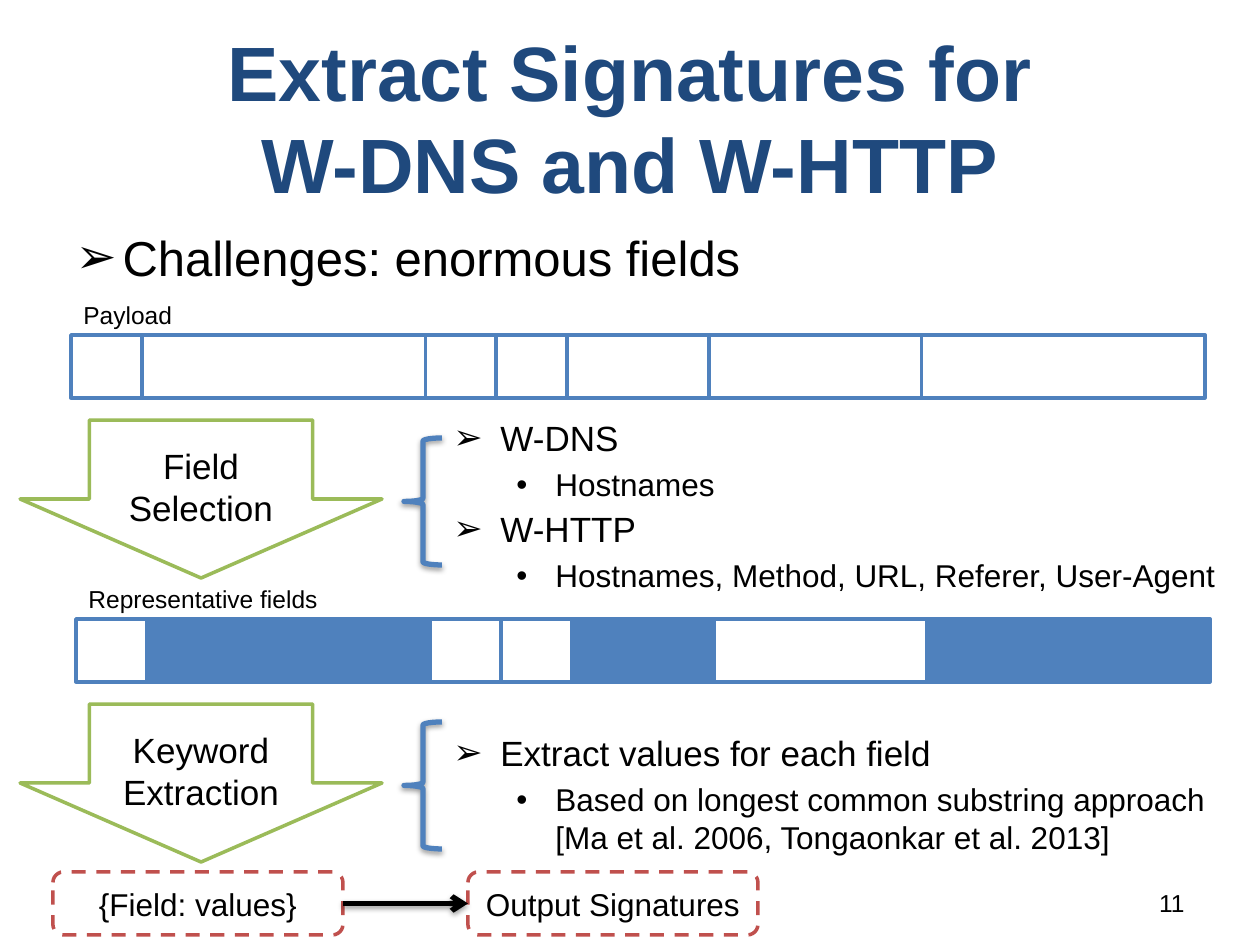
from itertools import accumulate
from lxml.etree import SubElement
from pptx import Presentation
from pptx.dml.color import RGBColor
from pptx.enum.dml import MSO_LINE_DASH_STYLE as DASH
from pptx.enum.shapes import MSO_CONNECTOR, MSO_SHAPE
from pptx.enum.text import MSO_ANCHOR, MSO_AUTO_SIZE as FIT, PP_ALIGN
from pptx.oxml import parse_xml
from pptx.oxml.ns import nsdecls, qn
from pptx.util import Pt

# Content
TITLE = "Extract Signatures for\vW-DNS and W-HTTP"
CHALLENGE = "Challenges: enormous fields"
FIELD_UNITS = [1, 4, 1, 1, 2, 3, 4]
STAGES = [  # bar left, bar label, label width, filled fields, step, step width
    (71, "Payload", 115, (), ["Field", "Selection"], 171),
    (76, "Representative fields", 256, (1, 4, 6), ["Keyword", "Extraction"], 183),
]
DETAILS = [  # top, width, heading, point
    (410, 558, "W-DNS", "Hostnames"),
    (501, 819, "W-HTTP", "Hostnames, Method, URL, Referer, User-Agent"),
    (725, 809, "Extract values for each field",
     "Based on longest common substring approach\v"
     "[Ma et al. 2006, Tongaonkar et al. 2013]"),
]
RESULTS = [(53, "{Field: values}"), (468, "Output Signatures")]
PAGE = "11"

COLORS = {"title": "1F497D", "text": "000000", "field": "4F81BD",
          "empty": "FFFFFF", "step": "9BBB59", "result": "C0504D"}
FONT = "Arial"
SCALE = 914400 / 126  # EMU per px
BAR_TOP, STAGE_STEP, BAR_WIDTH, BAR_HEIGHT = 335, 284, 1134, 63
STEP_CENTER = 201


def px(*lengths):
    return [round(length * SCALE) for length in lengths]


def rgb(name):
    return RGBColor.from_string(COLORS[name])


def style(paragraph, size, color="text", align=None, bold=None):
    font = paragraph.font
    font.name, font.size, font.bold = FONT, Pt(size), bold
    font.color.rgb = rgb(color)
    if align is not None:
        paragraph.alignment = align


def bullet(paragraph, mark, margin, hanging, before):
    paragraph.space_before = Pt(before)
    properties = paragraph._p.get_or_add_pPr()
    left, indent = px(margin, -hanging)
    properties.set("marL", str(left))
    properties.set("indent", str(indent))
    SubElement(properties, qn("a:buFont")).set("typeface", FONT)
    SubElement(properties, qn("a:buChar")).set("char", mark)


def add_label(shapes, box, lines, size, align, wrap=False):
    frame = shapes.add_textbox(*px(*box)).text_frame
    frame.word_wrap = wrap
    frame.auto_size = FIT.NONE if wrap else FIT.SHAPE_TO_FIT_TEXT
    frame.text = "\n".join(lines)
    for paragraph in frame.paragraphs:
        style(paragraph, size, align=align)
    return frame


def add_outline(shapes, kind, box, line, fill=None, width=2):
    shape = shapes.add_shape(kind, *px(*box))
    if fill:
        shape.fill.solid()
        shape.fill.fore_color.rgb = rgb(fill)
    else:
        shape.fill.background()
    shape.line.color.rgb = rgb(line)
    shape.line.width = Pt(width)
    shape.shadow.inherit = False
    return shape


def drop_shadow(shape):
    properties = shape._element.spPr
    for old in properties.findall(qn("a:effectLst")):
        properties.remove(old)
    properties.append(parse_xml(
        f'<a:effectLst {nsdecls("a")}><a:outerShdw blurRad="40000" dist="20000" '
        'dir="5400000" rotWithShape="0"><a:srgbClr val="000000">'
        '<a:alpha val="38000"/></a:srgbClr></a:outerShdw></a:effectLst>'))


prs = Presentation()
prs.slide_width, prs.slide_height = px(1260, 945)
slide = prs.slides.add_slide(prs.slide_layouts[1])
shapes = slide.shapes

# Title and challenge
title, challenge = shapes.title, slide.placeholders[1]
for holder, box, text in ((title, (63, 38, 1134, 158), TITLE),
                          (challenge, (63, 221, 1134, 73), CHALLENGE)):
    holder.left, holder.top, holder.width, holder.height = px(*box)
    holder.text_frame.text = text
    holder.text_frame.auto_size = FIT.NONE
title.text_frame.vertical_anchor = MSO_ANCHOR.MIDDLE
style(title.text_frame.paragraphs[0], 44, "title", PP_ALIGN.CENTER, True)
headline = challenge.text_frame.paragraphs[0]
bullet(headline, "➢", 47, 47, 3)
style(headline, 28)

# Stages: field bar, step arrow and brace
for row, (left, label, label_width, filled, step, step_width) in enumerate(STAGES):
    top = BAR_TOP + row * STAGE_STEP
    bar = shapes.add_group_shape().shapes
    unit = BAR_WIDTH / sum(FIELD_UNITS)
    starts = accumulate(FIELD_UNITS, initial=0)
    fields = list(enumerate(zip(starts, FIELD_UNITS)))
    for index, (start, units) in sorted(fields, key=lambda field: field[0] in filled):
        add_outline(bar, MSO_SHAPE.RECTANGLE,
                    (left + start * unit, top, units * unit, BAR_HEIGHT),
                    "field", "field" if index in filled else "empty")
    add_label(bar, (left, top - 41, label_width, 43), [label], 14, PP_ALIGN.LEFT)

    arrow = add_outline(shapes, MSO_SHAPE.RIGHT_ARROW,
                        (STEP_CENTER - 79, top - 17, 158, 362), "step", "empty")
    arrow.rotation = 90
    arrow.adjustments[0], arrow.adjustments[1] = 0.617, 0.5
    add_label(shapes, (STEP_CENTER - step_width / 2, top + 103, step_width, 97),
              step, 20, PP_ALIGN.CENTER)
    drop_shadow(add_outline(shapes, MSO_SHAPE.LEFT_BRACE,
                            (404, top + 103, 38, 127), "field", width=3))

# Details beside the braces
for top, width, heading, point in DETAILS:
    frame = add_label(shapes, (441, top, width, 55), [heading], 20, PP_ALIGN.LEFT, True)
    bullet(frame.paragraphs[0], "➢", 47, 47, 2)
    detail = frame.add_paragraph()
    detail.text, detail.level = point, 1
    bullet(detail, "•", 102, 39, 4)
    style(detail, 18)

# Results
boxes = []
for left, text in RESULTS:
    result = add_outline(shapes, MSO_SHAPE.ROUNDED_RECTANGLE,
                         (left, 872, 290, 63), "result")
    result.line.dash_style = DASH.DASH
    result.text_frame.text = text
    result.text_frame.vertical_anchor = MSO_ANCHOR.MIDDLE
    style(result.text_frame.paragraphs[0], 18, align=PP_ALIGN.CENTER)
    boxes.append(result)
flow = shapes.add_connector(MSO_CONNECTOR.STRAIGHT, *px(343, 903, 468, 903))
flow.begin_connect(boxes[0], 3)
flow.end_connect(boxes[1], 1)
flow.line.color.rgb = rgb("text")
flow.line.width = Pt(3)
SubElement(flow.line._get_or_add_ln(), qn("a:tailEnd")).set("type", "arrow")
drop_shadow(flow)

# Page number
add_label(shapes, (903, 882, 294, 44), [PAGE], 14, PP_ALIGN.RIGHT, True)

prs.save("out.pptx")
